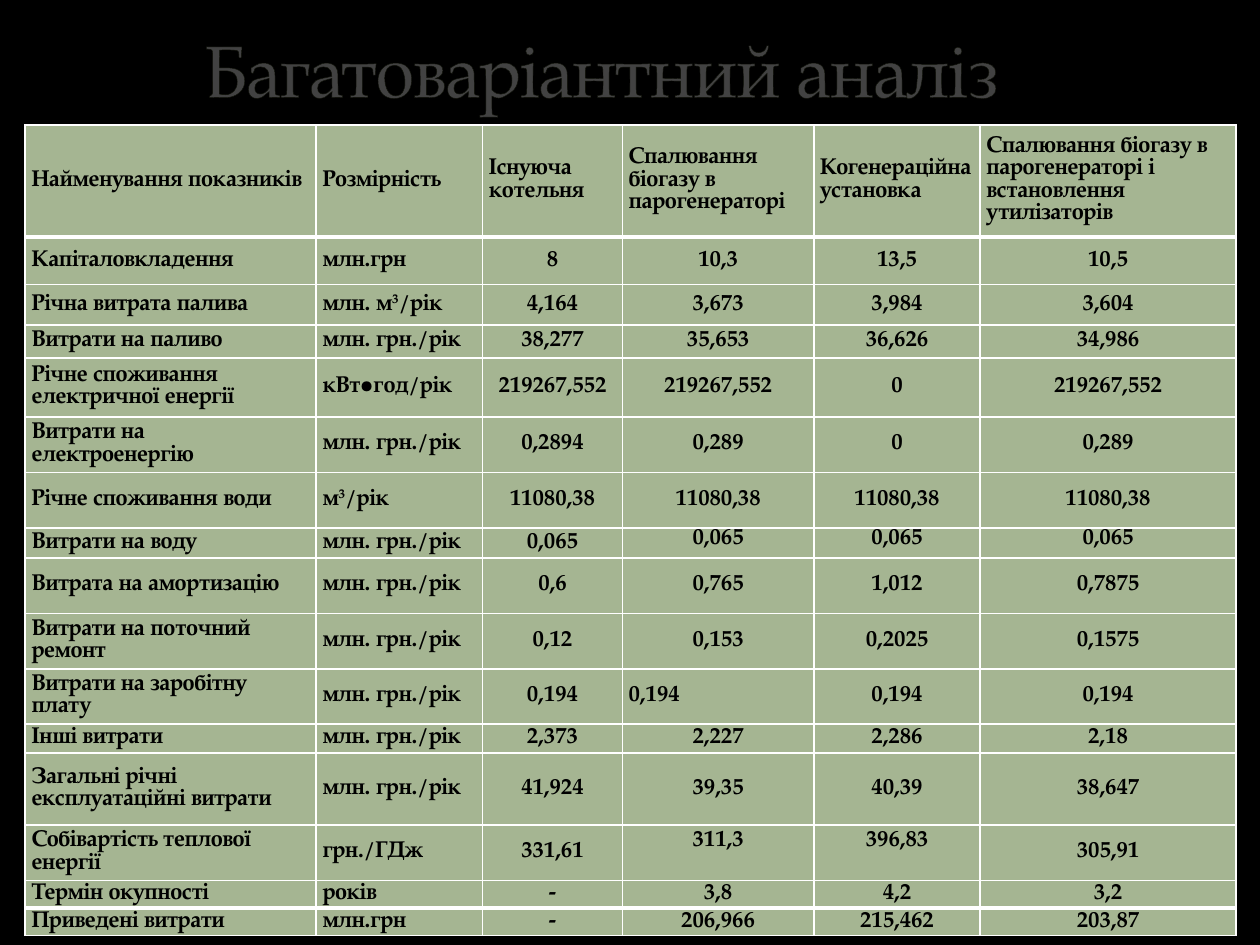
from lxml import etree
from pptx import Presentation, util as u
from pptx.dml.color import RGBColor
from pptx.enum import text
from pptx.oxml import ns

TITLE = "Багатоваріантний аналіз"
HEADER = ("Найменування показників", "Розмірність", "Існуюча котельня",
          "Спалювання біогазу в парогенераторі", "Когенераційна установка",
          "Спалювання біогазу в парогенераторі і встановлення утилізаторів")
MLN = "млн. грн./рік"
INDICATORS = [  # row height, name, unit, one value per variant
    (0.38, "Капіталовкладення", "млн.грн", "8", "10,3", "13,5", "10,5"),
    (0.32, "Річна витрата палива", "млн. м³/рік", "4,164", "3,673", "3,984", "3,604"),
    (0.26, "Витрати на паливо", MLN, "38,277", "35,653", "36,626", "34,986"),
    (0.47, "Річне споживання електричної енергії", "кВт∙год/рік",
     "219267,552", "219267,552", "0", "219267,552"),
    (0.44, "Витрати на електроенергію", MLN, "0,2894", "0,289", "0", "0,289"),
    (0.44, "Річне споживання води", "м³/рік", "11080,38", "11080,38", "11080,38", "11080,38"),
    (0.24, "Витрати на воду", MLN, "0,065", "0,065", "0,065", "0,065"),
    (0.44, "Витрата на амортизацію", MLN, "0,6", "0,765", "1,012", "0,7875"),
    (0.44, "Витрати на поточний ремонт", MLN, "0,12", "0,153", "0,2025", "0,1575"),
    (0.44, "Витрати на заробітну плату", MLN, "0,194", "0,194", "0,194", "0,194"),
    (0.23, "Інші витрати", MLN, "2,373", "2,227", "2,286", "2,18"),
    (0.57, "Загальні річні експлуатаційні витрати", MLN, "41,924", "39,35", "40,39", "38,647"),
    (0.44, "Собівартість теплової енергії", "грн./ГДж", "331,61", "311,3", "396,83", "305,91"),
    (0.22, "Термін окупності", "років", "-", "3,8", "4,2", "3,2"),
    (0.22, "Приведені витрати", "млн.грн", "-", "206,966", "215,462", "203,87"),
]
ROWS = [(0.89, *HEADER), *INDICATORS]
COLUMN_WIDTHS = (2.31, 1.32, 1.11, 1.52, 1.32, 2.03)
THICK_EDGES = {1, len(ROWS) - 1}  # counted from the table's top edge
TOP_CELLS = {(7, 3), (7, 4), (7, 5)}
RAISED_CELLS = {(13, 3), (13, 4)}
JUSTIFIED_CELLS = {(10, 3)}

COLORS = {"background": "000000", "title": "FFFFFF", "outline": "3C4422",
          "cell": "A5B592", "border": "FFFFFF", "ink": "000000"}
FONT = "TeX Gyre Pagella"
TITLE_FONT = {"name": FONT, "size": u.Pt(42), "bold": False}
CELL_FONT = {"name": FONT, "size": u.Pt(13), "bold": True}
CELL_MARGINS = {"margin_left": u.Inches(0.05), "margin_right": u.Inches(0.05),
                "margin_top": 0, "margin_bottom": 0}


def rgb(part):
    return RGBColor.from_string(COLORS[part])


def apply(target, values):
    for name, value in values.items():
        setattr(target, name, value)


def style_run(run, font, color):
    apply(run.font, font)
    run.font.color.rgb = rgb(color)


def line_xml(tag, points, color, alpha=100):
    line = etree.Element(ns.qn(tag), w=str(u.Pt(points)))
    fill = etree.SubElement(line, ns.qn("a:solidFill"))
    tint = etree.SubElement(fill, ns.qn("a:srgbClr"), val=COLORS[color])
    if alpha < 100:
        etree.SubElement(tint, ns.qn("a:alpha"), val=str(alpha * 1000))
    return line


def add_title(slide):
    title = slide.shapes.title
    apply(title, {"left": u.Inches(1.52), "top": 0,
                  "width": u.Inches(7.02), "height": u.Inches(0.94)})
    frame = title.text_frame
    apply(frame, {"vertical_anchor": text.MSO_ANCHOR.BOTTOM,
                  "auto_size": text.MSO_AUTO_SIZE.NONE, "word_wrap": True})
    paragraph = frame.paragraphs[0]
    paragraph.alignment = text.PP_ALIGN.LEFT
    run = paragraph.add_run()
    run.text = TITLE
    style_run(run, TITLE_FONT, "title")
    properties = run.font._element
    properties.set("spc", "-100")
    properties.insert(0, line_xml("a:ln", 0.25, "outline", alpha=25))


def alignment(row, column):
    if row == 0 or column == 0:
        return text.PP_ALIGN.LEFT
    if column == 1 or (row, column) in JUSTIFIED_CELLS:
        return text.PP_ALIGN.JUSTIFY
    return text.PP_ALIGN.CENTER


def write(paragraph, wording):
    """Add the wording, with each ³ as a raised 3."""
    for piece in wording.replace("³", "|³|").split("|"):
        run = paragraph.add_run()
        run.text = piece.replace("³", "3")
        style_run(run, CELL_FONT, "ink")
        if piece == "³":
            run.font._element.set("baseline", "30000")


def fill_cell(cell, row, column, wording):
    apply(cell, CELL_MARGINS)
    at_top = (row, column) in TOP_CELLS
    cell.vertical_anchor = text.MSO_ANCHOR.TOP if at_top else text.MSO_ANCHOR.MIDDLE
    if (row, column) in RAISED_CELLS:
        cell.margin_bottom = u.Inches(0.18)
    cell.fill.solid()
    cell.fill.fore_color.rgb = rgb("cell")
    paragraph = cell.text_frame.paragraphs[0]
    paragraph.alignment = alignment(row, column)
    write(paragraph, wording)
    top, bottom = (3 if edge in THICK_EDGES else 1 for edge in (row, row + 1))
    borders = {"a:lnL": 1, "a:lnR": 1, "a:lnT": top, "a:lnB": bottom}
    properties = cell._tc.get_or_add_tcPr()
    for place, (tag, points) in enumerate(borders.items()):
        properties.insert(place, line_xml(tag, points, "border"))


def add_indicator_table(slide):
    size = sum(COLUMN_WIDTHS), sum(height for height, *_ in ROWS)
    table = slide.shapes.add_table(
        len(ROWS), len(COLUMN_WIDTHS),
        *(u.Inches(length) for length in (0.2, 0.99, *size))).table
    apply(table, {"first_row": False, "horz_banding": False})
    for column, width in zip(table.columns, COLUMN_WIDTHS):
        column.width = u.Inches(width)
    for row, (height, *wordings) in enumerate(ROWS):
        table.rows[row].height = u.Inches(height)
        for column, wording in enumerate(wordings):
            fill_cell(table.cell(row, column), row, column, wording)


def main():
    deck = Presentation()
    apply(deck, {"slide_width": u.Inches(10), "slide_height": u.Inches(7.5)})
    slide = deck.slides.add_slide(deck.slide_layouts[5])
    slide.background.fill.solid()
    slide.background.fill.fore_color.rgb = rgb("background")
    add_title(slide)
    add_indicator_table(slide)
    deck.save("out.pptx")


if __name__ == "__main__":
    main()
